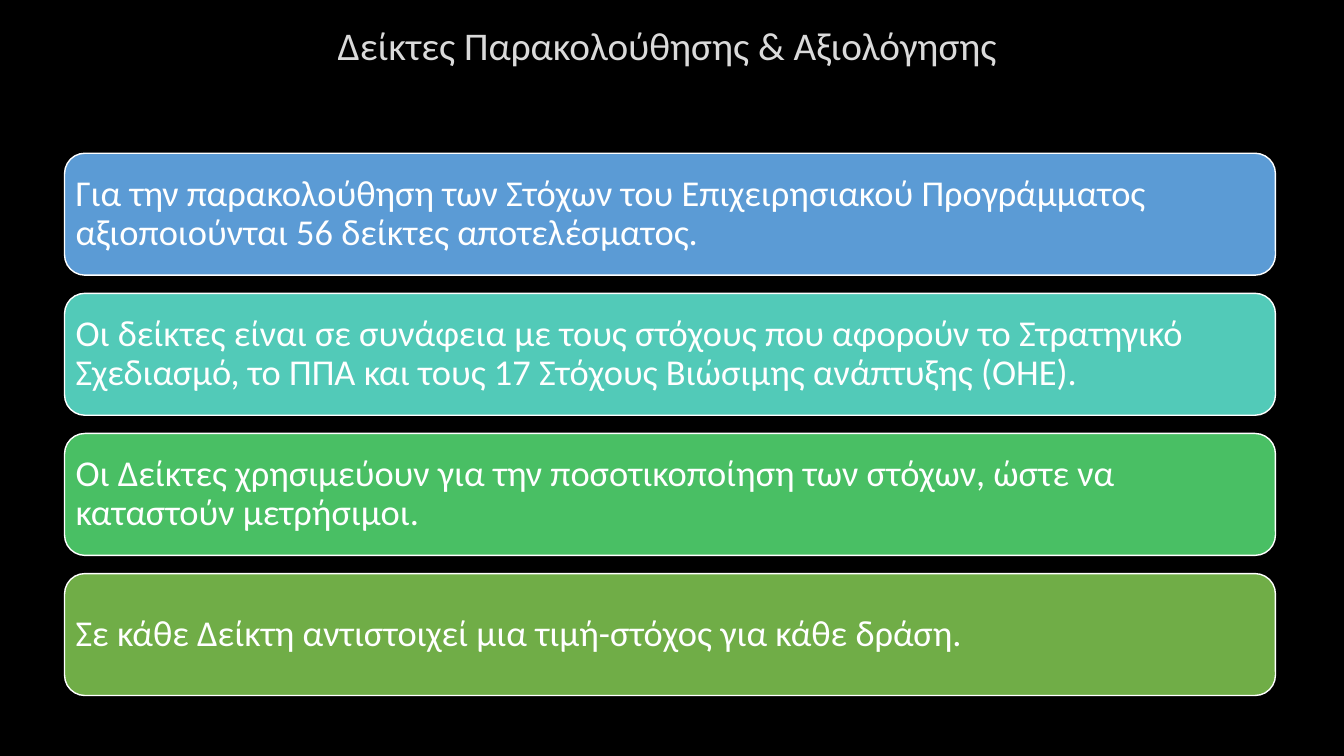
import pptx
import pptx.dml.color
import pptx.enum.shapes
import pptx.enum.text
import pptx.util

RGBColor = pptx.dml.color.RGBColor
BLACK = RGBColor(0x00, 0x00, 0x00)
WHITE = RGBColor(0xFF, 0xFF, 0xFF)
LIGHT_GREY = RGBColor(0xDA, 0xDA, 0xDA)
BLUE = RGBColor(0x5B, 0x9B, 0xD5)
TEAL = RGBColor(0x52, 0xCA, 0xB8)
GREEN = RGBColor(0x49, 0xBF, 0x64)
OLIVE = RGBColor(0x70, 0xAD, 0x47)

EMU_PER_PX = 9144

TITLE = "Δείκτες Παρακολούθησης & Αξιολόγησης "
STATEMENTS = [
    (BLUE, "Για την παρακολούθηση των Στόχων του Επιχειρησιακού Προγράμματος "
           "αξιοποιούνται 56 δείκτες αποτελέσματος."),
    (TEAL, "Οι δείκτες είναι σε συνάφεια με τους στόχους που αφορούν το Στρατηγικό "
           "Σχεδιασμό, το ΠΠΑ και τους 17 Στόχους Βιώσιμης ανάπτυξης (ΟΗΕ)."),
    (GREEN, "Οι Δείκτες χρησιμεύουν για την ποσοτικοποίηση των στόχων, ώστε να "
            "καταστούν μετρήσιμοι."),
    (OLIVE, "Σε κάθε Δείκτη αντιστοιχεί μια τιμή-στόχος για κάθε δράση."),
]


def px(n):
    return pptx.util.Emu(n * EMU_PER_PX)


class Deck:
    font = "Calibri"

    def __init__(self, width, height):
        self.prs = pptx.Presentation()
        self.prs.slide_width = px(width)
        self.prs.slide_height = px(height)

    def add_slide(self, background):
        self.s = self.prs.slides.add_slide(self.prs.slide_layouts[5])
        fill = self.s.background.fill
        fill.solid()
        fill.fore_color.rgb = background

    def set_text(self, sp, text, size, color, align, anchor):
        tf = sp.text_frame
        tf.text = text
        tf.word_wrap = True
        tf.auto_size = pptx.enum.text.MSO_AUTO_SIZE.NONE
        tf.vertical_anchor = anchor
        p = tf.paragraphs[0]
        p.alignment = align
        r = p.runs[0]
        r.font.name = self.font
        r.font.size = pptx.util.Pt(size)
        r.font.color.rgb = color
        return tf

    def title(self, text, left, top, width, height):
        sp = self.s.shapes.title
        sp.left, sp.top, sp.width, sp.height = map(px, (left, top, width, height))
        self.set_text(sp, text, 28, LIGHT_GREY,
                      pptx.enum.text.PP_ALIGN.CENTER, pptx.enum.text.MSO_ANCHOR.TOP)

    def card(self, text, color, left, top, width, height):
        sp = self.s.shapes.add_shape(
            pptx.enum.shapes.MSO_SHAPE.ROUNDED_RECTANGLE,
            *map(px, (left, top, width, height)))
        sp.shadow.inherit = False
        sp.fill.solid()
        sp.fill.fore_color.rgb = color
        sp.line.color.rgb = WHITE
        sp.line.width = pptx.util.Pt(1)
        tf = self.set_text(sp, text, 26, WHITE,
                           pptx.enum.text.PP_ALIGN.LEFT, pptx.enum.text.MSO_ANCHOR.MIDDLE)
        tf.margin_left = tf.margin_right = tf.margin_top = tf.margin_bottom = px(5)
        tf.paragraphs[0].line_spacing = 0.9


def main():
    deck = Deck(1333, 750)
    deck.add_slide(BLACK)
    deck.title(TITLE, 100, 16, 1132, 71)
    card_top, card_height, gap = 152, 121, 18
    for i, (color, text) in enumerate(STATEMENTS):
        deck.card(text, color, 64, card_top + i * (card_height + gap), 1201, card_height)
    deck.prs.save("out.pptx")


if __name__ == "__main__":
    main()
